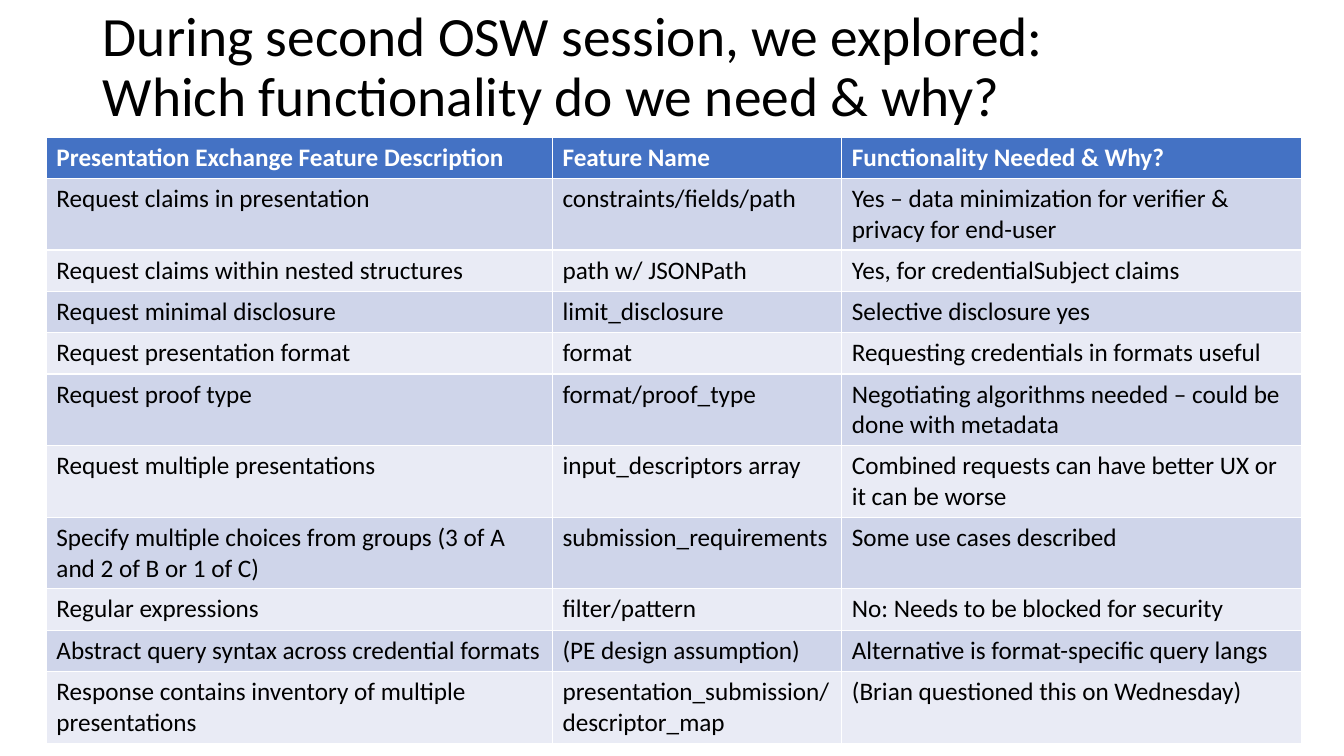
from pptx import Presentation
from pptx.dml.color import RGBColor
from pptx.enum.text import MSO_ANCHOR, MSO_AUTO_SIZE, PP_ALIGN
from pptx.util import Inches, Pt

FONT = "Calibri"
BLACK = RGBColor(0x00, 0x00, 0x00)
WHITE = RGBColor(0xFF, 0xFF, 0xFF)
HEADER_BLUE = RGBColor(0x44, 0x72, 0xC4)
BAND_COLORS = (RGBColor(0xE9, 0xEB, 0xF5), RGBColor(0xCF, 0xD5, 0xEA))

TITLE = "During second OSW session, we explored:\vWhich functionality do we need & why?"
COLUMN_WIDTHS = (5.02, 2.87, 4.56)
ROW_HEIGHT = 0.41
FEATURES = (
    ("Presentation Exchange Feature Description", "Feature Name", "Functionality Needed & Why?"),
    ("Request claims in presentation", "constraints/fields/path",
     "Yes – data minimization for verifier & privacy for end-user"),
    ("Request claims within nested structures", "path w/ JSONPath",
     "Yes, for credentialSubject claims"),
    ("Request minimal disclosure", "limit_disclosure", "Selective disclosure yes"),
    ("Request presentation format", "format", "Requesting credentials in formats useful"),
    ("Request proof type", "format/proof_type",
     "Negotiating algorithms needed – could be done with metadata"),
    ("Request multiple presentations", "input_descriptors array",
     "Combined requests can have better UX or it can be worse"),
    ("Specify multiple choices from groups (3 of A and 2 of B or 1 of C)",
     "submission_requirements", "Some use cases described"),
    ("Regular expressions", "filter/pattern", "No: Needs to be blocked for security"),
    ("Abstract query syntax across credential formats", "(PE design assumption)",
     "Alternative is format-specific query langs"),
    ("Response contains inventory of multiple presentations",
     "presentation_submission/descriptor_map", "(Brian questioned this on Wednesday)"),
)


def set_font(paragraph, size, color, bold=False):
    """Apply the slide font to a whole paragraph."""
    font = paragraph.font
    font.name, font.size, font.bold = FONT, Pt(size), bold
    font.color.rgb = color


def fill_title(slide, left, top, width, height):
    """Place the two-line heading in the title placeholder."""
    title = slide.shapes.title
    title.left, title.top = Inches(left), Inches(top)
    title.width, title.height = Inches(width), Inches(height)
    frame = title.text_frame
    frame.text = TITLE
    frame.word_wrap = True
    frame.auto_size = MSO_AUTO_SIZE.NONE
    frame.vertical_anchor = MSO_ANCHOR.MIDDLE
    paragraph = frame.paragraphs[0]
    paragraph.alignment = PP_ALIGN.LEFT
    paragraph.line_spacing = 0.9
    set_font(paragraph, 39.6, BLACK)


def add_feature_table(slide, left, top):
    """Add the banded feature table with its header row."""
    table = slide.shapes.add_table(
        len(FEATURES), len(COLUMN_WIDTHS), Inches(left), Inches(top),
        Inches(sum(COLUMN_WIDTHS)), Inches(ROW_HEIGHT * len(FEATURES)),
    ).table
    for column, width in zip(table.columns, COLUMN_WIDTHS):
        column.width = Inches(width)
    for row_index, feature in enumerate(FEATURES):
        is_header = row_index == 0
        table.rows[row_index].height = Inches(ROW_HEIGHT)
        for cell, text in zip(table.rows[row_index].cells, feature):
            cell.text = text
            cell.fill.solid()
            cell.fill.fore_color.rgb = HEADER_BLUE if is_header else BAND_COLORS[row_index % 2]
            set_font(cell.text_frame.paragraphs[0], 18, WHITE if is_header else BLACK, is_header)


def main():
    """Build and save the presentation."""
    presentation = Presentation()
    presentation.slide_width, presentation.slide_height = Inches(13.33), Inches(7.5)
    slide = presentation.slides.add_slide(presentation.slide_layouts.get_by_name("Title Only"))
    fill_title(slide, 0.92, 0.21, 11.5, 0.94)
    add_feature_table(slide, 0.46, 1.36)
    presentation.save("out.pptx")


if __name__ == "__main__":
    main()
